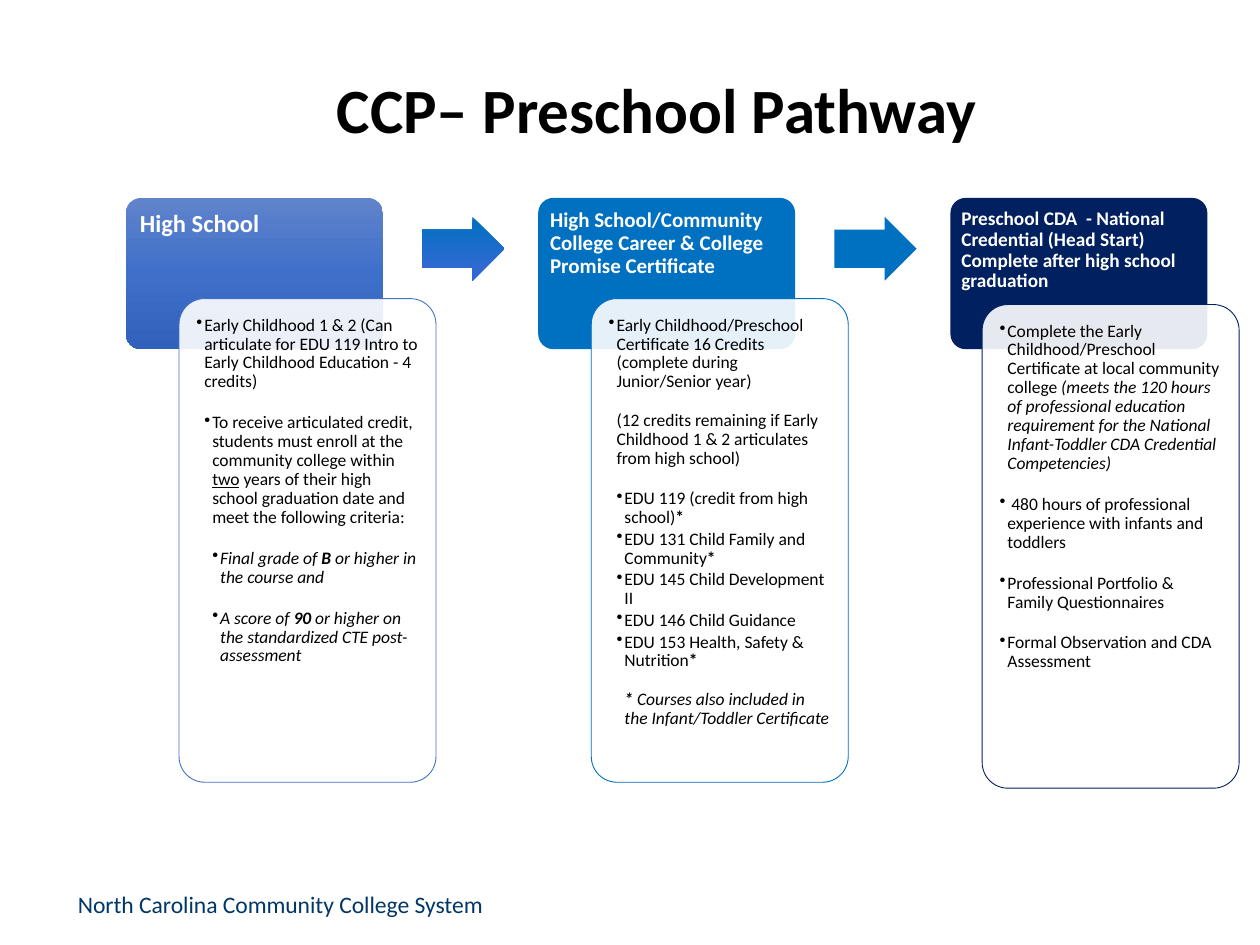
from dataclasses import dataclass

from lxml import etree
from pptx import Presentation
from pptx.dml.color import RGBColor
from pptx.enum.shapes import MSO_SHAPE
from pptx.enum.text import MSO_ANCHOR, PP_ALIGN
from pptx.oxml.ns import qn
from pptx.util import Cm, Pt

ROUNDED = MSO_SHAPE.ROUNDED_RECTANGLE
ARROW = MSO_SHAPE.RIGHT_ARROW
TOP, MIDDLE = MSO_ANCHOR.TOP, MSO_ANCHOR.MIDDLE
LEFT, CENTER = PP_ALIGN.LEFT, PP_ALIGN.CENTER

FONT = "Calibri"
COLORS = {
    "black": "000000",
    "white": "FFFFFF",
    "footer": "003767",
    "indigo": "4472C4",
    "blue": "0070C0",
    "navy": "002060",
}
HEADER_GRADIENT = [(0, "6183CB"), (50, "3E70CA"), (100, "3062BB")]
ARROW_GRADIENT = [(0, "0070C0"), (80, "2F69D1"), (100, "2C69D5")]

CARD_WIDTH, HEADER_HEIGHT, PANEL_HEIGHT = 5.18, 3.05, 9.75
HEADING_HEIGHT = 2.03
FIRST_LEFT, CARD_TOP, CARD_PITCH = 2.54, 3.99, 8.31
ARROW_OFFSET = 5.97
HANGING = 0.16
ITEM_GAP, BLOCK_GAP, NOTE_GAP = 1.5, 12.5, 11


@dataclass
class Item:
    runs: list
    level: int = 0
    bullet: bool = False
    after: float = 0


@dataclass
class Step:
    heading: str
    size: float
    inset: float
    fill: object
    line: str
    panel_offset: tuple
    items: list


STEPS = [
    Step("High School", 14, 0.28, HEADER_GRADIENT, "indigo", (1.07, 2.03), [
        Item([("Early Childhood 1 & 2 (Can articulate for EDU 119 Intro to "
               "Early Childhood Education - 4 credits)", "")], 1, True, BLOCK_GAP),
        Item([("To receive articulated credit, students must enroll at the "
               "community college within ", ""), ("two", "u"),
              (" years of their high school graduation date and meet the "
               "following criteria:", "")], 2, True, BLOCK_GAP),
        Item([("Final grade of ", "i"), ("B ", "bi"),
              ("or higher in the course and", "i")], 3, True, BLOCK_GAP),
        Item([("A score of ", "i"), ("90 ", "bi"),
              ("or higher on the standardized CTE post-assessment", "i")], 3, True),
    ]),
    Step("High School/Community College Career & College Promise Certificate",
         12, 0.24, "blue", "blue", (1.07, 2.03), [
             Item([("Early Childhood/Preschool Certificate 16 Credits "
                    "\v(complete during Junior/Senior year)", "")], 1, True, NOTE_GAP),
             Item([("(12 credits remaining if Early Childhood 1 & 2 articulates "
                    "from high school)", "")], 1, False, BLOCK_GAP),
             Item([("EDU 119 (credit from high school)", ""), ("*", "b")],
                  2, True, ITEM_GAP),
             Item([("EDU 131 Child Family and Community", ""), ("*", "b")],
                  2, True, ITEM_GAP),
             Item([("EDU 145 Child Development II", "")], 2, True, ITEM_GAP),
             Item([("EDU 146 Child Guidance", "")], 2, True, ITEM_GAP),
             Item([("EDU 153 Health, Safety & Nutrition", ""), ("*", "b")],
                  2, True, NOTE_GAP),
             Item([("*", "bi"),
                   (" Courses also included in the Infant/Toddler Certificate", "i")], 2),
         ]),
    Step("Preschool CDA  - National Credential (Head Start) Complete after "
         "high school graduation", 11, 0.22, "navy", "navy", (0.64, 2.15), [
             Item([("Complete the Early Childhood/Preschool Certificate at local "
                    "community college ", ""),
                   ("(meets the 120 hours of professional education requirement "
                    "for the National Infant-Toddler CDA Credential "
                    "Competencies)", "i")], 1, True, BLOCK_GAP),
             Item([(" 480 hours of professional experience with infants and "
                    "toddlers", "")], 1, True, BLOCK_GAP),
             Item([("Professional Portfolio & Family Questionnaires", "")],
                  1, True, BLOCK_GAP),
             Item([("Formal Observation and CDA Assessment", "")], 1, True),
         ]),
]


def rgb(name):
    return RGBColor.from_string(COLORS[name])


def indent_paragraph(paragraph, item):
    paragraph.level = item.level
    properties = paragraph._p.get_or_add_pPr()
    properties.set("marL", str(Cm(HANGING * item.level)))
    properties.set("indent", str(Cm(-HANGING) if item.bullet else 0))
    if item.bullet:
        etree.SubElement(properties, qn("a:buChar")).set("char", "•")


def write_text(shape, items, size, color="black", bold=False, align=LEFT,
               anchor=TOP, inset=0.2, spacing=0.9):
    frame = shape.text_frame
    frame.word_wrap = True
    frame.vertical_anchor = anchor
    frame.margin_left = frame.margin_top = Cm(inset)
    frame.margin_right = frame.margin_bottom = Cm(inset)
    for index, item in enumerate(items):
        paragraph = frame.add_paragraph() if index else frame.paragraphs[0]
        if item.level:
            indent_paragraph(paragraph, item)
        paragraph.alignment = align
        paragraph.line_spacing = spacing
        paragraph.space_before = Pt(0)
        paragraph.space_after = Pt(item.after)
        for text, style in item.runs:
            for number, line in enumerate(text.split("\v")):
                if number:
                    paragraph.add_line_break()
                run = paragraph.add_run()
                run.text = line
                font = run.font
                font.name, font.size = FONT, Pt(size)
                font.color.rgb = rgb(color)
                font.bold = bold or "b" in style
                font.italic = "i" in style
                font.underline = "u" in style


def fill_shape(shape, fill):
    if isinstance(fill, str):
        shape.fill.solid()
        shape.fill.fore_color.rgb = rgb(fill)
        return
    shape.fill.gradient()
    shape.fill.gradient_angle = 270
    stops = shape._element.spPr.find(qn("a:gradFill")).find(qn("a:gsLst"))
    stops.clear()
    for position, color in fill:
        stop = etree.SubElement(stops, qn("a:gs"), pos=str(position * 1000))
        etree.SubElement(stop, qn("a:srgbClr"), val=color)


def add_box(slide, kind, left, top, width, height, fill, adjustments, line=None):
    shape = slide.shapes.add_shape(kind, Cm(left), Cm(top), Cm(width), Cm(height))
    shape.shadow.inherit = False
    for index, value in enumerate(adjustments):
        shape.adjustments[index] = value
    fill_shape(shape, fill)
    if line:
        shape.line.color.rgb = rgb(line)
        shape.line.width = Pt(0.5)
    else:
        shape.line.fill.background()
    return shape


def add_textbox(slide, left, top, width, height, items, **text_format):
    shape = slide.shapes.add_textbox(Cm(left), Cm(top), Cm(width), Cm(height))
    write_text(shape, items, **text_format)


def add_step(slide, left, top, step):
    add_box(slide, ROUNDED, left, top, CARD_WIDTH, HEADER_HEIGHT, step.fill, [0.1])
    add_textbox(slide, left, top, CARD_WIDTH, HEADING_HEIGHT,
                [Item([(step.heading, "")])], size=step.size, color="white",
                bold=True, inset=step.inset)
    panel_left, panel_top = left + step.panel_offset[0], top + step.panel_offset[1]
    panel = add_box(slide, ROUNDED, panel_left, panel_top, CARD_WIDTH,
                    PANEL_HEIGHT, "white", [0.1], step.line)
    color = panel._element.spPr.find(qn("a:solidFill")).find(qn("a:srgbClr"))
    etree.SubElement(color, qn("a:alpha"), val="90000")
    margin = 0.15
    add_textbox(slide, panel_left + margin, panel_top + margin,
                CARD_WIDTH - 2 * margin, PANEL_HEIGHT - 2 * margin,
                step.items, size=10)


def add_title(slide, left, top, width, height):
    title = slide.shapes.title
    title.left, title.top = Cm(left), Cm(top)
    title.width, title.height = Cm(width), Cm(height)
    write_text(title, [Item([("CCP– Preschool Pathway", "")])], size=36,
               bold=True, align=CENTER, anchor=MIDDLE)


def main():
    presentation = Presentation()
    presentation.slide_width, presentation.slide_height = Cm(25.4), Cm(19.05)
    slide = presentation.slides.add_slide(presentation.slide_layouts[5])
    add_title(slide, 3.28, 0.97, 19.91, 2.62)
    add_textbox(slide, 1.32, 17.7, 9.02, 1.02,
                [Item([("North Carolina Community College System", "")])],
                size=13.5, color="footer", inset=0.25, spacing=1)
    for index, step in enumerate(STEPS):
        left = FIRST_LEFT + index * CARD_PITCH
        add_step(slide, left, CARD_TOP, step)
        if index < len(STEPS) - 1:
            add_box(slide, ARROW, left + ARROW_OFFSET, CARD_TOP + 0.38, 1.66, 1.29,
                    "blue" if index else ARROW_GRADIENT, [0.6, 0.5])
    presentation.save("out.pptx")


if __name__ == "__main__":
    main()
